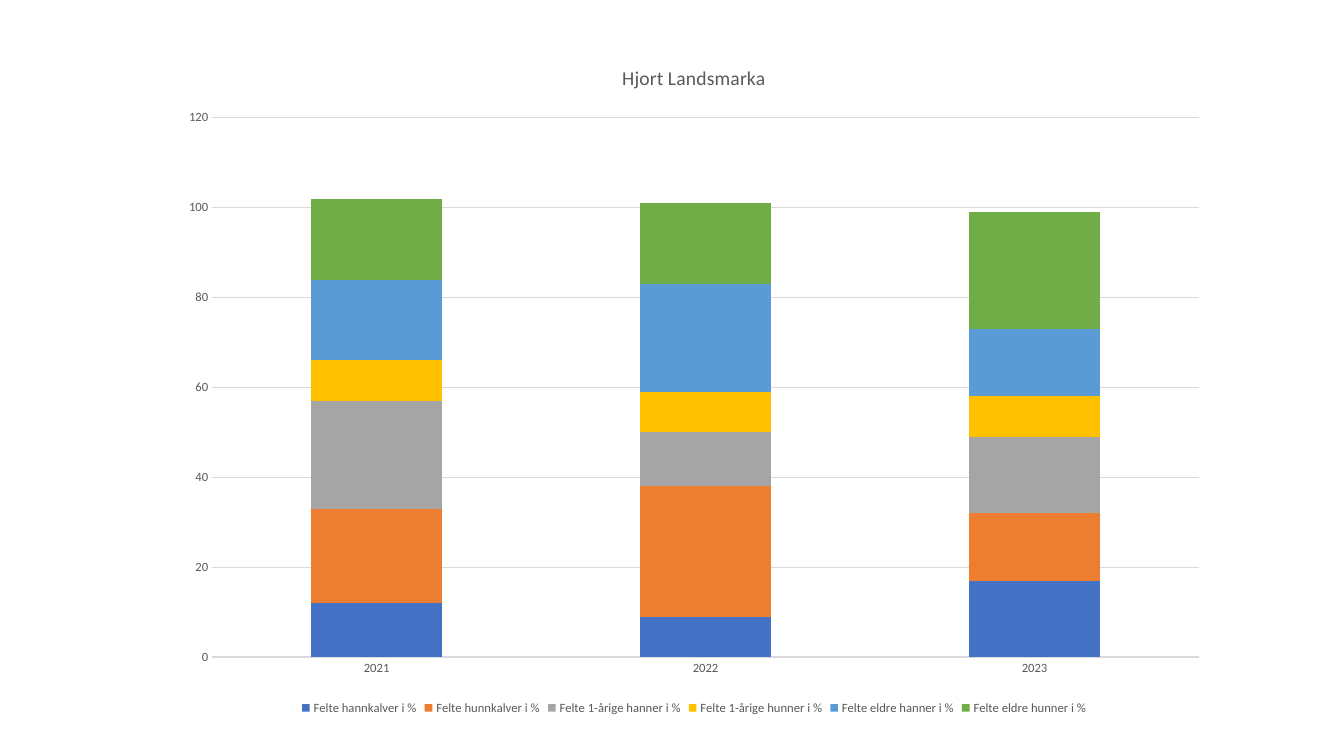
from dataclasses import dataclass

from pptx import Presentation
from pptx import util as u
from pptx.chart.data import CategoryChartData
from pptx.dml.color import RGBColor
from pptx.enum import chart as ch

PX = 9525  # EMU per px, 96 px to the inch


@dataclass(frozen=True)
class Theme:
    font: str = "Calibri"
    text: str = "595959"
    rule: str = "D9D9D9"
    title_size: int = 14
    label_size: int = 9
    rule_width: float = 0.75


THEME = Theme()
YEARS = ["2021", "2022", "2023"]
HARVEST = [
    ("Felte hannkalver i %", (12, 9, 17), "4472C4"),
    ("Felte hunnkalver i %", (21, 29, 15), "ED7D31"),
    ("Felte 1-årige hanner i %", (24, 12, 17), "A5A5A5"),
    ("Felte 1-årige hunner i %", (9, 9, 9), "FFC000"),
    ("Felte eldre hanner i %", (18, 24, 15), "5B9BD5"),
    ("Felte eldre hunner i %", (18, 18, 26), "70AD47"),
]


def style_font(font, size):
    font.name = THEME.font
    font.size = u.Pt(size)
    font.bold = False
    font.color.rgb = RGBColor.from_string(THEME.text)


def style_rule(line):
    line.color.rgb = RGBColor.from_string(THEME.rule)
    line.width = u.Pt(THEME.rule_width)


def style_axes(chart):
    for axis in (chart.category_axis, chart.value_axis):
        axis.major_tick_mark = axis.minor_tick_mark = ch.XL_TICK_MARK.NONE
        style_font(axis.tick_labels.font, THEME.label_size)
    style_rule(chart.category_axis.format.line)

    values = chart.value_axis
    values.minimum_scale, values.maximum_scale, values.major_unit = 0, 120, 20
    values.format.line.fill.background()
    values.has_major_gridlines = True
    style_rule(values.major_gridlines.format.line)


def add_harvest_chart(s, x, y, w, h):
    data = CategoryChartData(number_format="General")
    data.categories = YEARS
    for name, shares, _ in HARVEST:
        data.add_series(name, shares)
    chart = s.shapes.add_chart(
        ch.XL_CHART_TYPE.COLUMN_STACKED, *(n * PX for n in (x, y, w, h)), data
    ).chart
    style_font(chart.font, THEME.label_size)

    chart.has_title = True
    tf = chart.chart_title.text_frame
    tf.text = "Hjort Landsmarka"
    style_font(tf.paragraphs[0].font, THEME.title_size)
    chart.chart_title.include_in_layout = False

    chart.has_legend = True
    chart.legend.position = ch.XL_LEGEND_POSITION.BOTTOM
    chart.legend.include_in_layout = False
    style_font(chart.legend.font, THEME.label_size)

    style_axes(chart)
    plot = chart.plots[0]
    plot.gap_width, plot.overlap, plot.vary_by_categories = 150, 100, False
    for series, (_, _, color) in zip(plot.series, HARVEST):
        series.format.fill.solid()
        series.format.fill.fore_color.rgb = RGBColor.from_string(color)


def main():
    prs = Presentation()
    prs.slide_width, prs.slide_height = 1280 * PX, 720 * PX
    s = prs.slides.add_slide(prs.slide_layouts[6])
    add_harvest_chart(s, 160, 40, 1002, 645)
    prs.save("out.pptx")


if __name__ == "__main__":
    main()
